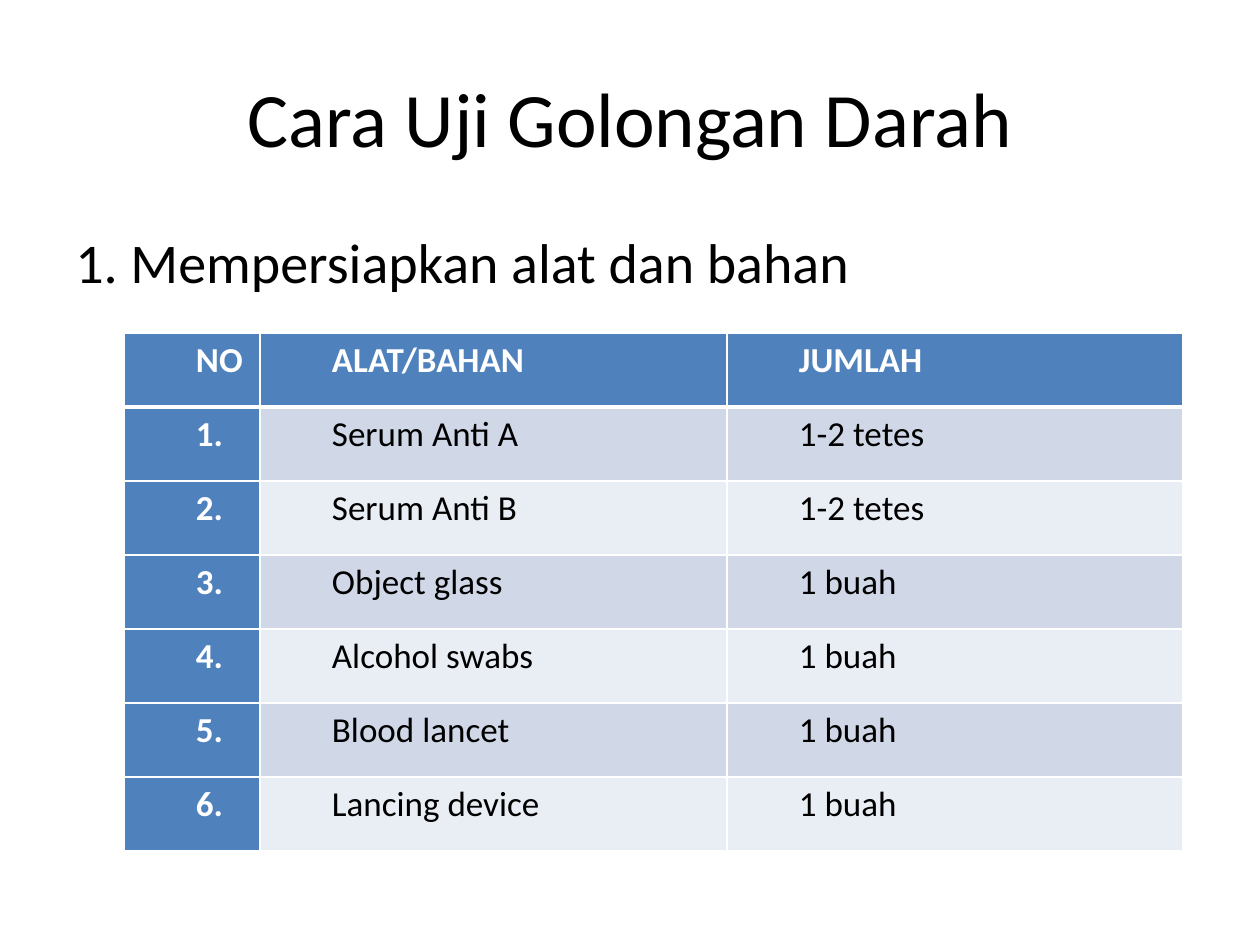
"""Builds the slide on preparing materials for a blood type test."""
from lxml.etree import SubElement
from pptx import Presentation
from pptx.dml.color import RGBColor
from pptx.enum.text import MSO_ANCHOR, PP_ALIGN
from pptx.oxml.ns import qn
from pptx.util import Emu, Pt

TITLE = "Cara Uji Golongan Darah"
STEP = "1. Mempersiapkan alat dan bahan"
HEADER = ("NO", "ALAT/BAHAN", "JUMLAH")
MATERIALS = [
    ("Serum Anti A", "1-2 tetes"),
    ("Serum Anti B", "1-2 tetes"),
    ("Object glass", "1 buah"),
    ("Alcohol swabs", "1 buah"),
    ("Blood lancet", "1 buah"),
    ("Lancing device", "1 buah"),
]
COLORS = {"text": "000000", "white": "FFFFFF", "accent": "4F81BD",
          "odd": "D0D8E8", "even": "E9EDF4"}
FONT = "Calibri"
COLUMN_WIDTHS = (136, 467, 456)
ROW_HEIGHT = 74
CELL_INSET = 9
CELL_INDENT = 63


def px(length):
    return Emu(round(length * 914400 / 126))


def style(paragraph, size, color, bold=False):
    font = paragraph.font
    font.name, font.size, font.bold = FONT, Pt(size), bold
    font.color.rgb = RGBColor.from_string(COLORS[color])


def add_text(slide, text, box, size, align, anchor):
    frame = slide.shapes.add_textbox(*map(px, box)).text_frame
    frame.word_wrap = True
    frame.vertical_anchor = anchor
    paragraph = frame.paragraphs[0]
    paragraph.text = text
    paragraph.alignment = align
    style(paragraph, size, "text")


def add_borders(cell, widths):
    properties = cell._tc.get_or_add_tcPr()
    for side, width in widths.items():
        border = SubElement(properties, qn(f"a:ln{side}"), w=str(Pt(width)))
        fill = SubElement(border, qn("a:solidFill"))
        SubElement(fill, qn("a:srgbClr"), val=COLORS["white"])


def fill_cell(cell, text, row, column):
    is_heading = row == 0 or column == 0
    band = "accent" if is_heading else "odd" if row % 2 else "even"
    add_borders(cell, {"L": 1, "R": 1, "T": 3 if row == 1 else 1,
                       "B": 3 if row == 0 else 1})
    cell.fill.solid()
    cell.fill.fore_color.rgb = RGBColor.from_string(COLORS[band])
    cell.margin_left = cell.margin_right = px(CELL_INSET)
    cell.margin_top = cell.margin_bottom = 0
    paragraph = cell.text_frame.paragraphs[0]
    paragraph.text = text
    paragraph.line_spacing = 1.15
    paragraph._p.get_or_add_pPr().set("marL", str(px(CELL_INDENT)))
    style(paragraph, 20, "white" if is_heading else "text", is_heading)


def add_materials(slide, left, top):
    rows = [HEADER] + [(f"{number}.", *material)
                       for number, material in enumerate(MATERIALS, 1)]
    size = sum(COLUMN_WIDTHS), ROW_HEIGHT * len(rows)
    table = slide.shapes.add_table(
        len(rows), len(HEADER), *map(px, (left, top, *size))).table
    for column, width in zip(table.columns, COLUMN_WIDTHS):
        column.width = px(width)
    for r, texts in enumerate(rows):
        table.rows[r].height = px(ROW_HEIGHT)
        for c, text in enumerate(texts):
            fill_cell(table.cell(r, c), text, r, c)


def main():
    deck = Presentation()
    deck.slide_width, deck.slide_height = px(1260), px(945)
    slide = deck.slides.add_slide(deck.slide_layouts[6])
    add_text(slide, TITLE, (63, 38, 1134, 158), 44,
             PP_ALIGN.CENTER, MSO_ANCHOR.MIDDLE)
    add_text(slide, STEP, (63, 221, 1134, 624), 32,
             PP_ALIGN.LEFT, MSO_ANCHOR.TOP)
    add_materials(slide, 124, 333)
    deck.save("out.pptx")


if __name__ == "__main__":
    main()
